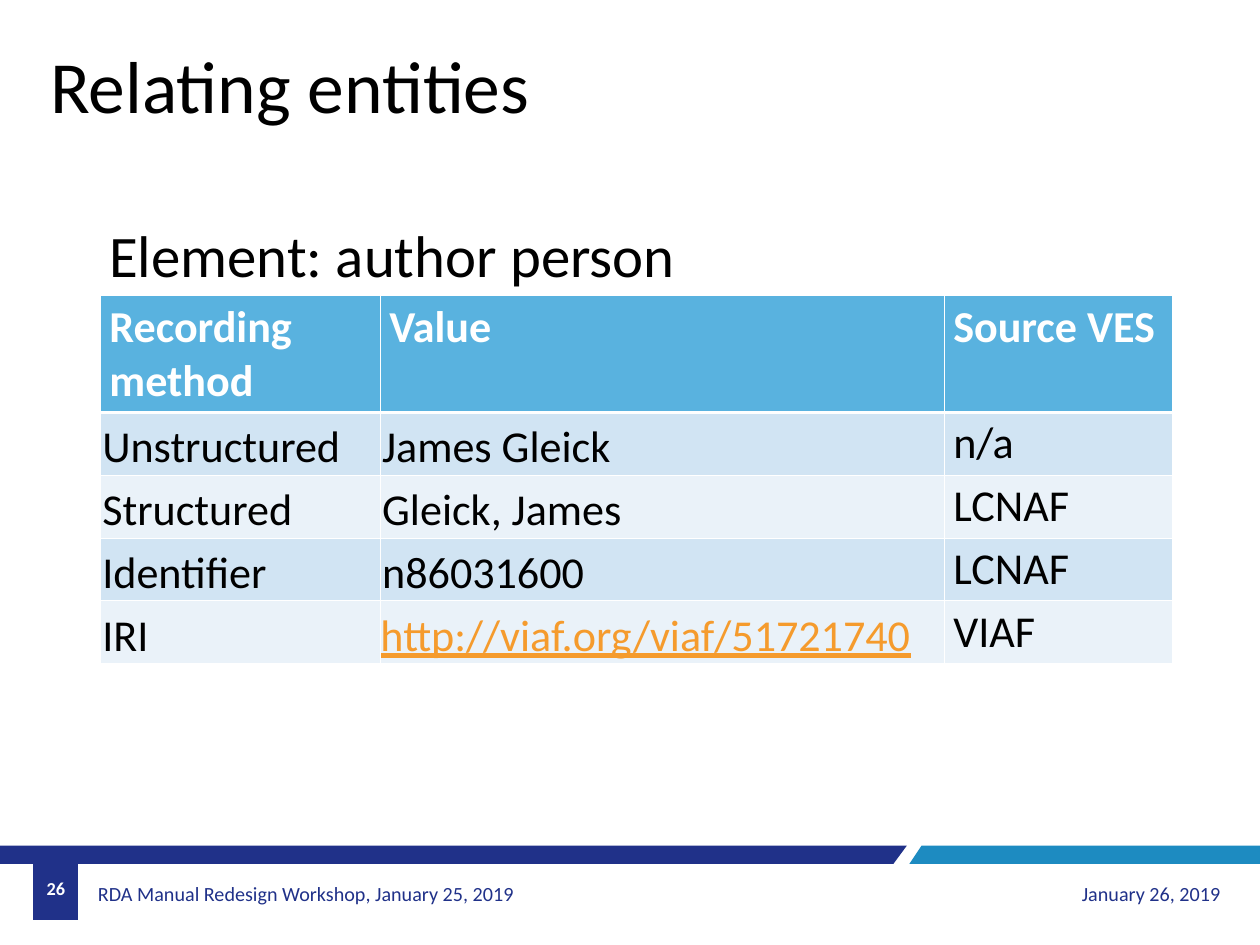
from lxml.etree import SubElement as Sub
from pptx import Presentation
from pptx.dml.color import RGBColor as Rgb
from pptx.enum.text import MSO_ANCHOR as Anc, MSO_AUTO_SIZE as Fit, PP_ALIGN as Al
from pptx.oxml.ns import qn
from pptx.util import Pt

HUE = dict(navy="203189", blue="1D8BC1", head="59B2DF", dark="D1E4F3",
           pale="EAF2F9", link="F59B2D", black="000000", white="FFFFFF")
WIDE, HIGH = 1028.16, 771.12
TITLE = "Relating entities"
ROWS = [
    ("Recording method", "Value", "Source VES"),
    ("Unstructured", "James Gleick", "n/a"),
    ("Structured", "Gleick, James", "LCNAF"),
    ("Identifier", "n86031600", "LCNAF"),
    ("IRI", "http://viaf.org/viaf/51721740", "VIAF"),
]
COLS = (228.4, 460.2, 186)
TALL = (92.2,) + (50.5,) * 4
BAR, FOOT = 690.5, 704.9
BANDS = [
    ("navy", [(0, BAR), (739.6, BAR), (729.4, FOOT), (0, FOOT)]),
    ("blue", [(751.7, BAR), (WIDE, BAR), (WIDE, FOOT), (741.6, FOOT)]),
    ("navy", [(26.8, BAR), (64.2, BAR), (64.2, 751), (26.8, 751)]),
]
MID = dict(word_wrap=True, vertical_anchor=Anc.MIDDLE)
LOOSE = dict(word_wrap=False, vertical_anchor=Anc.TOP)
NOTES = [
    ("RDA Manual Redesign Workshop, January 25, 2019", (74.9, 709.2, 397.4, 39.6),
     dict(size=16.4, hue="navy"), dict(MID, margin_left=Pt(5), margin_right=Pt(5)), Al.LEFT),
    ("January 26, 2019", (739.4, 709.2, 263.5, 39.6),
     dict(size=16.4, hue="navy"), MID, Al.RIGHT),
    ("26", (26.8, 704.9, 37.4, 39.6),
     dict(size=14.9, hue="white", bold=True), MID, Al.CENTER),
    ("Element: author person", (82.1, 175, 481.7, 65.5),
     dict(size=48), LOOSE, Al.LEFT),
]


def apply(item, vals):
    for key, val in vals.items():
        setattr(item, key, val)


def write(frame, text, size, hue="black", align=Al.LEFT, **more):
    par = frame.paragraphs[0]
    par.alignment = align
    run = par.add_run()
    run.text = text
    apply(run.font, dict(name="Calibri", size=Pt(size), **more))
    run.font.color.rgb = Rgb.from_string(HUE[hue])


def paint(item, hue):
    item.fill.solid()
    item.fill.fore_color.rgb = Rgb.from_string(HUE[hue])


def edge(cell, row):
    props = cell._tc.get_or_add_tcPr()
    for side in "LRTB":
        thick = (row, side) in ((0, "B"), (1, "T"))
        line = Sub(props, qn("a:ln" + side), w=str(Pt(3 if thick else 1)))
        Sub(Sub(line, qn("a:solidFill")), qn("a:srgbClr"), val=HUE["white"])


def band(slide, hue, dots):
    pen = slide.shapes.build_freeform(*dots[0], scale=Pt(1))
    pen.add_line_segments(dots[1:], close=True)
    form = pen.convert_to_shape()
    paint(form, hue)
    form.line.fill.background()
    form.shadow.inherit = False


def grid(slide):
    table = slide.shapes.add_table(
        len(ROWS), len(COLS), Pt(82.1), Pt(241.2), Pt(sum(COLS)), Pt(sum(TALL))).table
    for col, wide in zip(table.columns, COLS):
        col.width = Pt(wide)
    for i, (row, tall) in enumerate(zip(ROWS, TALL)):
        table.rows[i].height = Pt(tall)
        for j, text in enumerate(row):
            cell = table.cell(i, j)
            edge(cell, i)
            paint(cell, "head" if i == 0 else "dark" if i % 2 else "pale")
            link = text.startswith("http")
            if i and j < 2:
                side = Pt(0 if link else 1.4)
                apply(cell, dict(vertical_anchor=Anc.BOTTOM, margin_left=side,
                                 margin_right=side, margin_top=Pt(0.7), margin_bottom=Pt(0.7)))
            hue = "white" if i == 0 else "link" if link else "black"
            write(cell.text_frame, text, 36, hue, bold=i == 0, underline=link)


def main():
    deck = Presentation()
    apply(deck, dict(slide_width=Pt(WIDE), slide_height=Pt(HIGH)))
    slide = deck.slides.add_slide(deck.slide_layouts[5])
    for hue, dots in BANDS:
        band(slide, hue, dots)
    title = slide.shapes.title
    apply(title, dict(left=Pt(33.8), top=Pt(28.8), width=Pt(411), height=Pt(80)))
    apply(title.text_frame, dict(LOOSE, auto_size=Fit.NONE))
    write(title.text_frame, TITLE, 60)
    grid(slide)
    for text, place, font, frame, align in NOTES:
        box = slide.shapes.add_textbox(*map(Pt, place))
        apply(box.text_frame, frame)
        write(box.text_frame, text, align=align, **font)
    deck.save("out.pptx")


if __name__ == "__main__":
    main()
